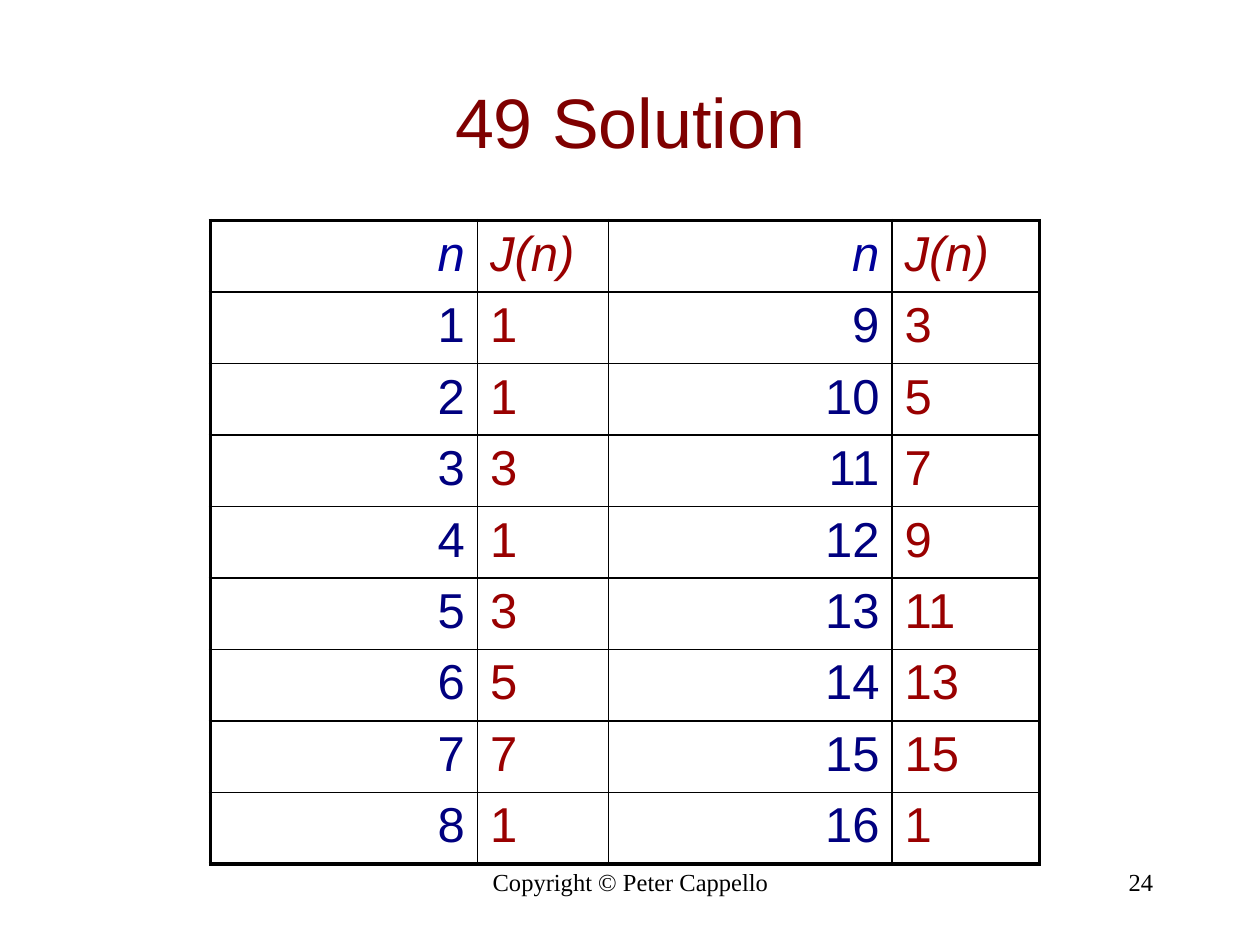
import pptx
import pptx.dml.color
import pptx.enum.text
import pptx.oxml.ns
import pptx.util
from lxml import etree

Inches = pptx.util.Inches
Pt = pptx.util.Pt
RGBColor = pptx.dml.color.RGBColor
ALIGN = pptx.enum.text.PP_ALIGN
ANCHOR = pptx.enum.text.MSO_ANCHOR
qn = pptx.oxml.ns.qn

BLACK = RGBColor(0x00, 0x00, 0x00)
MAROON = RGBColor(0x7F, 0x00, 0x00)
RED = RGBColor(0x99, 0x00, 0x00)
HEADER_BLUE = RGBColor(0x00, 0x00, 0x99)
NAVY = RGBColor(0x00, 0x00, 0x7F)

JOSEPHUS = [1, 1, 3, 1, 3, 5, 7, 1, 3, 5, 7, 9, 11, 13, 15, 1]
HALF = len(JOSEPHUS) // 2
COLUMN_WIDTHS = [2.12, 1.04, 2.25, 1.17]
ROW_HEIGHT = 5.1 / (HALF + 1)


def write(text_frame, text, size, font_name, color, alignment, italic=False):
    paragraph = text_frame.paragraphs[0]
    paragraph.alignment = alignment
    run = paragraph.add_run()
    run.text = text
    run.font.size = Pt(size)
    run.font.name = font_name
    run.font.color.rgb = color
    run.font.italic = italic


def add_border(cell, side, width):
    properties = cell._tc.get_or_add_tcPr()
    line = etree.SubElement(properties, qn("a:" + side), w=str(Pt(width)))
    fill = etree.SubElement(line, qn("a:solidFill"))
    etree.SubElement(fill, qn("a:srgbClr"), val=str(BLACK))


presentation = pptx.Presentation()
presentation.slide_width = Inches(10)
presentation.slide_height = Inches(7.5)
slide = presentation.slides.add_slide(presentation.slide_layouts[5])

# Footer and slide number
for text, left, width, alignment in [
    ("Copyright © Peter Cappello", 3.42, 3.17, ALIGN.CENTER),
    ("24", 7.17, 2.08, ALIGN.RIGHT),
]:
    text_box = slide.shapes.add_textbox(
        Inches(left), Inches(6.83), Inches(width), Inches(0.5))
    text_box.text_frame.word_wrap = True
    write(text_box.text_frame, text, 14, "Times New Roman", BLACK, alignment)

# Title
title = slide.shapes.title
title.left, title.top = Inches(0.75), Inches(0.33)
title.width, title.height = Inches(8.5), Inches(1.25)
title.text_frame.vertical_anchor = ANCHOR.MIDDLE
write(title.text_frame, "49 Solution", 40, "Arial", MAROON, ALIGN.CENTER)

# Table contents: a header, then n beside n + HALF
rows = [["n", "J(n)", "n", "J(n)"]]
for index in range(HALF):
    rows.append([index + 1, JOSEPHUS[index],
                 index + 1 + HALF, JOSEPHUS[index + HALF]])

# Table
table = slide.shapes.add_table(
    len(rows), len(COLUMN_WIDTHS), Inches(1.67), Inches(1.75),
    Inches(sum(COLUMN_WIDTHS)), Inches(5.1)).table
table.first_row = False
table.horz_banding = False
for column, width in zip(table.columns, COLUMN_WIDTHS):
    column.width = Inches(width)

last_row, last_column = len(rows) - 1, len(COLUMN_WIDTHS) - 1
for row_index, values in enumerate(rows):
    table.rows[row_index].height = Inches(ROW_HEIGHT)
    is_header = row_index == 0
    for column_index, value in enumerate(values):
        cell = table.cell(row_index, column_index)
        # Thick frame outside, thin lines inside
        for side, is_outer in [
            ("lnL", column_index == 0),
            ("lnR", column_index == last_column),
            ("lnT", is_header),
            ("lnB", row_index == last_row),
        ]:
            add_border(cell, side, 2.25 if is_outer else 1)
        cell.fill.background()
        if column_index % 2 == 0:
            color = HEADER_BLUE if is_header else NAVY
            alignment = ALIGN.RIGHT
        else:
            color, alignment = RED, ALIGN.LEFT
        write(cell.text_frame, str(value), 28, "Arial", color, alignment,
              italic=is_header)

presentation.save("out.pptx")
